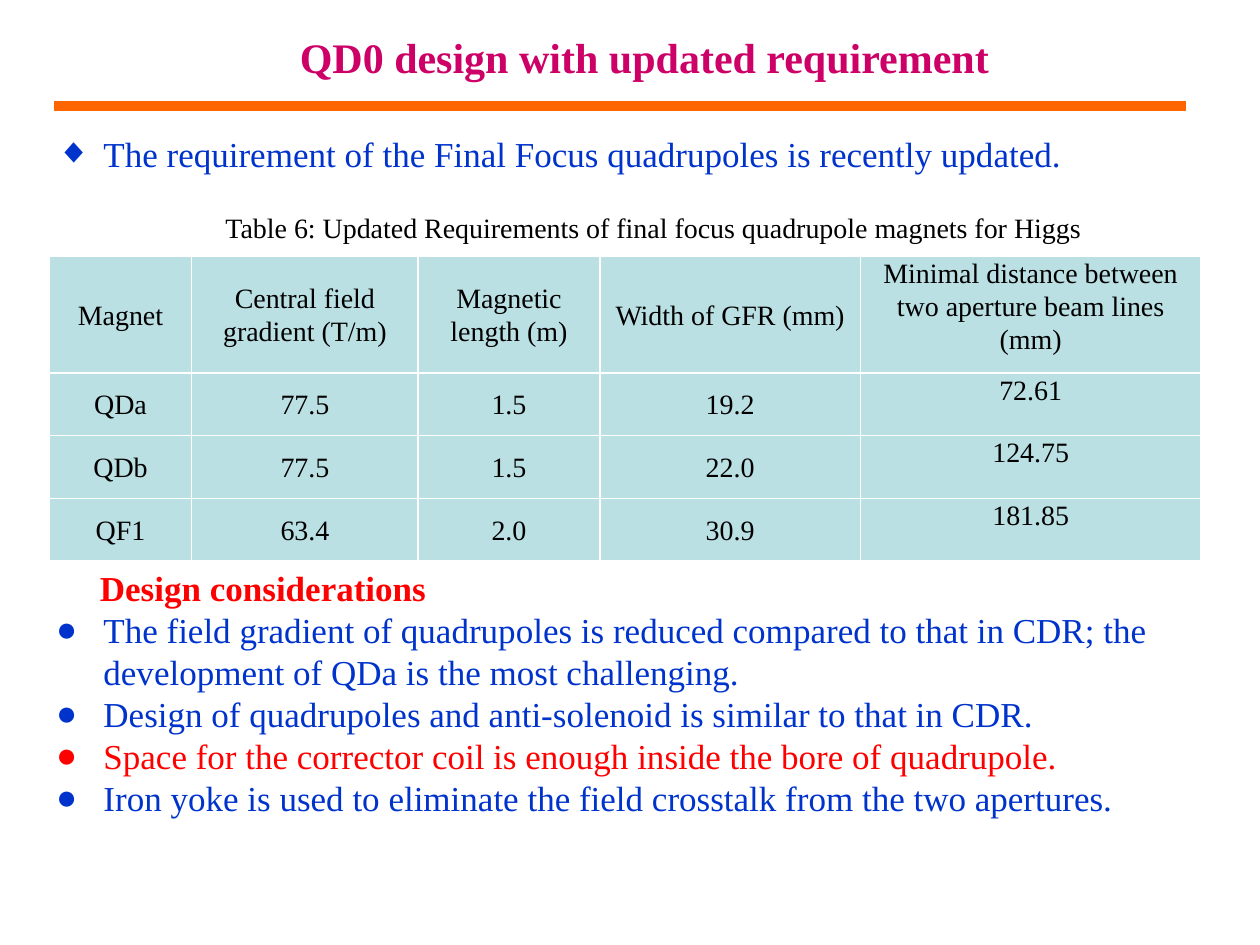
from lxml import etree
from pptx import Presentation
from pptx.dml.color import RGBColor
from pptx.enum.shapes import MSO_CONNECTOR
from pptx.enum.text import MSO_ANCHOR, PP_ALIGN
from pptx.oxml.ns import qn
from pptx.util import Pt

COLORS = {"title": "CC0066", "rule": "FF6600", "body": "0033CC", "accent": "FF0000",
          "text": "000000", "cell": "BBE0E3", "border": "FFFFFF"}
FONT = "Times New Roman"
COLUMN_WIDTHS = [81.25, 129.5, 103.75, 149, 194.5]
ROW_HEIGHTS = [67, 35.75, 35.75, 35.75]
REQUIREMENTS = [
    ["Magnet", "Central field gradient (T/m)", "Magnetic length (m)", "Width of GFR (mm)",
     "Minimal distance between two aperture beam lines (mm)"],
    ["QDa", "77.5", "1.5", "19.2", "72.61"],
    ["QDb", "77.5", "1.5", "22.0", "124.75"],
    ["QF1", "63.4", "2.0", "30.9", "181.85"],
]
# Text, bullet, colour, space before
BODY = [
    ("The requirement of the Final Focus quadrupoles is recently updated.", "◆", "body", 0),
    ("Design considerations", None, "accent", 224),
    ("The field gradient of quadrupoles is reduced compared to that in CDR; "
     "the development of QDa is the most challenging.", "●", "body", 0),
    ("Design of quadrupoles and anti-solenoid is similar to that in CDR.", "●", "body", 0),
    ("Space for the corrector coil is enough inside the bore of quadrupole.", "●", "accent", 0),
    ("Iron yoke is used to eliminate the field crosstalk from the two apertures.",
     "●", "body", 0),
]


def style(paragraph, size, color, bold=False):
    for run in paragraph.runs:
        run.font.name = FONT
        run.font.size = Pt(size)
        run.font.bold = bold
        run.font.color.rgb = RGBColor.from_string(COLORS[color])


def add_text_frame(slide, left, top, width, height):
    frame = slide.shapes.add_textbox(Pt(left), Pt(top), Pt(width), Pt(height)).text_frame
    frame.word_wrap = True
    return frame


def set_indent(paragraph, bullet):
    properties = paragraph._p.get_or_add_pPr()
    properties.set("marL", str(Pt(27 if bullet else 25)))
    properties.set("indent", str(Pt(-27 if bullet else 0)))
    if bullet:
        etree.SubElement(properties, qn("a:buFont")).set("typeface", FONT)
        etree.SubElement(properties, qn("a:buChar")).set("char", bullet)


def set_borders(cell):
    properties = cell._tc.get_or_add_tcPr()
    for position, side in enumerate(("lnL", "lnR", "lnT", "lnB")):
        border = etree.Element(qn(f"a:{side}"), w=str(Pt(1)))
        fill = etree.SubElement(border, qn("a:solidFill"))
        etree.SubElement(fill, qn("a:srgbClr")).set("val", COLORS["border"])
        properties.insert(position, border)


def add_header(slide, left, top, width, height):
    # Title
    title = add_text_frame(slide, left + 5, top, width, height)
    title.vertical_anchor = MSO_ANCHOR.MIDDLE
    title.text = "QD0 design with updated requirement"
    title.paragraphs[0].alignment = PP_ALIGN.CENTER
    style(title.paragraphs[0], 24, "title", bold=True)

    # Rule below the title
    rule_y = Pt(top + height + 5)
    rule = slide.shapes.add_connector(
        MSO_CONNECTOR.STRAIGHT, Pt(left), rule_y, Pt(left + 646.5), rule_y)
    rule.line.color.rgb = RGBColor.from_string(COLORS["rule"])
    rule.line.width = Pt(6)
    etree.SubElement(rule._element.spPr, qn("a:effectLst"))


def add_body(slide, left, top, width, height):
    body = add_text_frame(slide, left, top, width, height)
    for index, (text, bullet, color, space_before) in enumerate(BODY):
        paragraph = body.add_paragraph() if index else body.paragraphs[0]
        paragraph.text = text
        set_indent(paragraph, bullet)
        paragraph.line_spacing = Pt(24)
        paragraph.space_before = Pt(space_before)
        style(paragraph, 20, color, bold=bullet is None)


def add_requirements(slide, left, top, width, height):
    # Caption
    caption = add_text_frame(slide, left + 93.5, top, 527, 27)
    caption.text = "Table 6: Updated Requirements of final focus quadrupole magnets for Higgs"
    style(caption.paragraphs[0], 16, "text")

    # Table
    table = slide.shapes.add_table(len(ROW_HEIGHTS), len(COLUMN_WIDTHS), Pt(left),
                                   Pt(top + 29.5), Pt(width), Pt(height - 29.5)).table
    for column, column_width in zip(table.columns, COLUMN_WIDTHS):
        column.width = Pt(column_width)
    for row, row_height, values in zip(table.rows, ROW_HEIGHTS, REQUIREMENTS):
        row.height = Pt(row_height)
        for index, (cell, value) in enumerate(zip(row.cells, values)):
            is_distance = index == len(values) - 1
            cell.text = value
            cell.vertical_anchor = MSO_ANCHOR.TOP if is_distance else MSO_ANCHOR.MIDDLE
            cell.margin_left = cell.margin_right = Pt(5 if is_distance else 0)
            cell.margin_top = cell.margin_bottom = Pt(0 if is_distance else 4.5)
            cell.fill.solid()
            cell.fill.fore_color.rgb = RGBColor.from_string(COLORS["cell"])
            set_borders(cell)
            paragraph = cell.text_frame.paragraphs[0]
            paragraph.alignment = PP_ALIGN.CENTER
            paragraph.line_spacing = 1.07
            paragraph.space_after = Pt(8)
            style(paragraph, 16, "text")


def main():
    presentation = Presentation()
    presentation.slide_width, presentation.slide_height = Pt(720), Pt(540)
    slide = presentation.slides.add_slide(presentation.slide_layouts[6])
    add_body(slide, 25, 72, 663, 442)
    add_requirements(slide, 28.25, 116.75, sum(COLUMN_WIDTHS), 29.5 + sum(ROW_HEIGHTS))
    add_header(slide, 31, 9.5, 664.5, 46)
    presentation.save("out.pptx")


if __name__ == "__main__":
    main()
